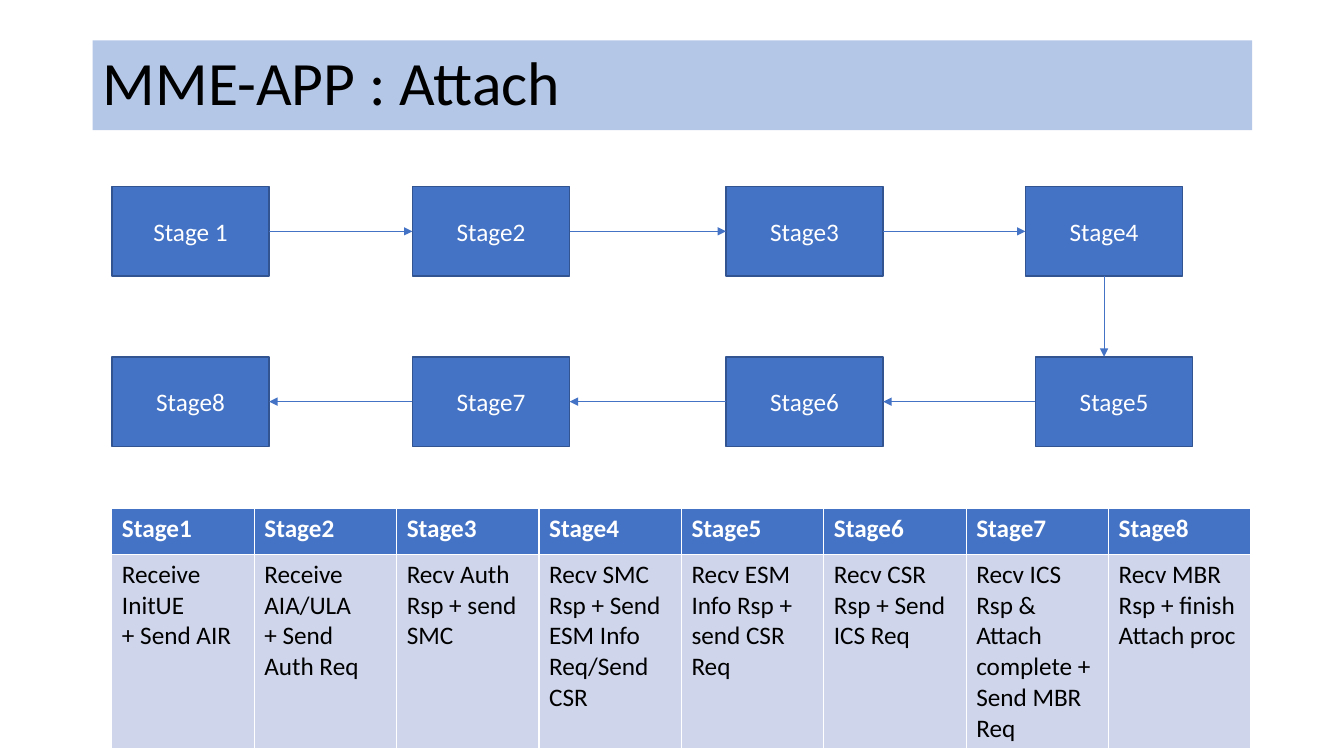
from pptx import Presentation
from pptx.dml.color import RGBColor as RGB
from pptx.enum.shapes import MSO_CONNECTOR as Conn, MSO_SHAPE as Shape
from pptx.enum.text import MSO_ANCHOR as Anchor, PP_ALIGN as Align
from pptx.oxml.ns import qn
from pptx.util import Inches, Pt
from lxml.etree import SubElement

BLUE, EDGE, PALE, BAND = "4472C4", "325491", "B4C7E7", "CFD5EA"
WHITE, BLACK = "FFFFFF", "000000"
LEFT, TOP_ROW, LOW_ROW = 1.11, 1.85, 3.54
BOX_W, BOX_H = 1.56, 0.89
LEFT_SITE, BOTTOM_SITE, RIGHT_SITE = 1, 2, 3

STAGES = [
    ("Stage 1", LEFT, TOP_ROW), ("Stage2", 4.09, TOP_ROW),
    ("Stage3", 7.2, TOP_ROW), ("Stage4", 10.17, TOP_ROW),
    ("Stage5", 10.27, LOW_ROW), ("Stage6", 7.2, LOW_ROW),
    ("Stage7", 4.09, LOW_ROW), ("Stage8", LEFT, LOW_ROW),
]
STEPS = [
    "Receive InitUE\n+ Send AIR",
    "Receive AIA/ULA\n+ Send Auth Req",
    "Recv Auth Rsp + send SMC",
    "Recv SMC Rsp + Send ESM Info Req/Send CSR",
    "Recv ESM Info Rsp + send CSR Req",
    "Recv CSR Rsp + Send ICS Req",
    "Recv ICS Rsp & Attach complete + Send MBR Req",
    "Recv MBR Rsp + finish Attach proc",
]


def paint(fill, color):
    fill.solid()
    fill.fore_color.rgb = RGB.from_string(color)


def write(frame, text, size, color, align=Align.LEFT, bold=False):
    frame.text = text
    for para in frame.paragraphs:
        para.alignment = align
        for run in para.runs:
            font = run.font
            font.name, font.size, font.bold = "Calibri", Pt(size), bold
            font.color.rgb = RGB.from_string(color)


def add_rect(slide, left, top, width, height, fill):
    rect = slide.shapes.add_shape(
        Shape.RECTANGLE, Inches(left), Inches(top), Inches(width), Inches(height))
    rect.shadow.inherit = False
    paint(rect.fill, fill)
    rect.text_frame.word_wrap = True
    rect.text_frame.vertical_anchor = Anchor.MIDDLE
    return rect


def add_title(slide, text):
    bar = add_rect(slide, 0.92, 0.4, 11.5, 0.89, PALE)
    bar.line.fill.background()
    write(bar.text_frame, text, 44, BLACK)
    bar.text_frame.paragraphs[0].line_spacing = 0.9


def add_stage(slide, name, left, top):
    box = add_rect(slide, left, top, BOX_W, BOX_H, BLUE)
    box.line.width = Pt(1)
    box.line.color.rgb = RGB.from_string(EDGE)
    write(box.text_frame, name, 18, WHITE, Align.CENTER)
    return box


def add_arrow(slide, start, end):
    """Join two boxes sideways, or straight down when they are in different rows."""
    arrow = slide.shapes.add_connector(Conn.STRAIGHT, 0, 0, 0, 0)
    if start.top != end.top:
        arrow.begin_connect(start, BOTTOM_SITE)
        arrow.end_x, arrow.end_y = arrow.begin_x, end.top
    else:
        sites = RIGHT_SITE, LEFT_SITE
        if start.left > end.left:
            sites = LEFT_SITE, RIGHT_SITE
        arrow.begin_connect(start, sites[0])
        arrow.end_connect(end, sites[1])
    arrow.line.width = Pt(0.5)
    arrow.line.color.rgb = RGB.from_string(BLUE)
    SubElement(arrow.line._get_or_add_ln(), qn("a:tailEnd"), type="triangle")
    SubElement(arrow._element.spPr, qn("a:effectLst"))


def add_steps(slide):
    table = slide.shapes.add_table(
        2, len(STEPS), Inches(LEFT), Inches(5.04), Inches(11.3), Inches(2.07)).table
    table.rows[0].height, table.rows[1].height = Inches(0.46), Inches(1.61)
    for col, step in enumerate(STEPS):
        head, body = table.cell(0, col), table.cell(1, col)
        paint(head.fill, BLUE)
        write(head.text_frame, f"Stage{col + 1}", 18, WHITE, bold=True)
        paint(body.fill, BAND)
        write(body.text_frame, step, 18, BLACK)


def main():
    deck = Presentation()
    deck.slide_width, deck.slide_height = Inches(13.33), Inches(7.5)
    slide = deck.slides.add_slide(deck.slide_layouts[6])
    add_title(slide, "MME-APP : Attach")
    boxes = [add_stage(slide, *stage) for stage in STAGES]
    for start, end in zip(boxes, boxes[1:]):
        add_arrow(slide, start, end)
    add_steps(slide)
    deck.save("out.pptx")


if __name__ == "__main__":
    main()
